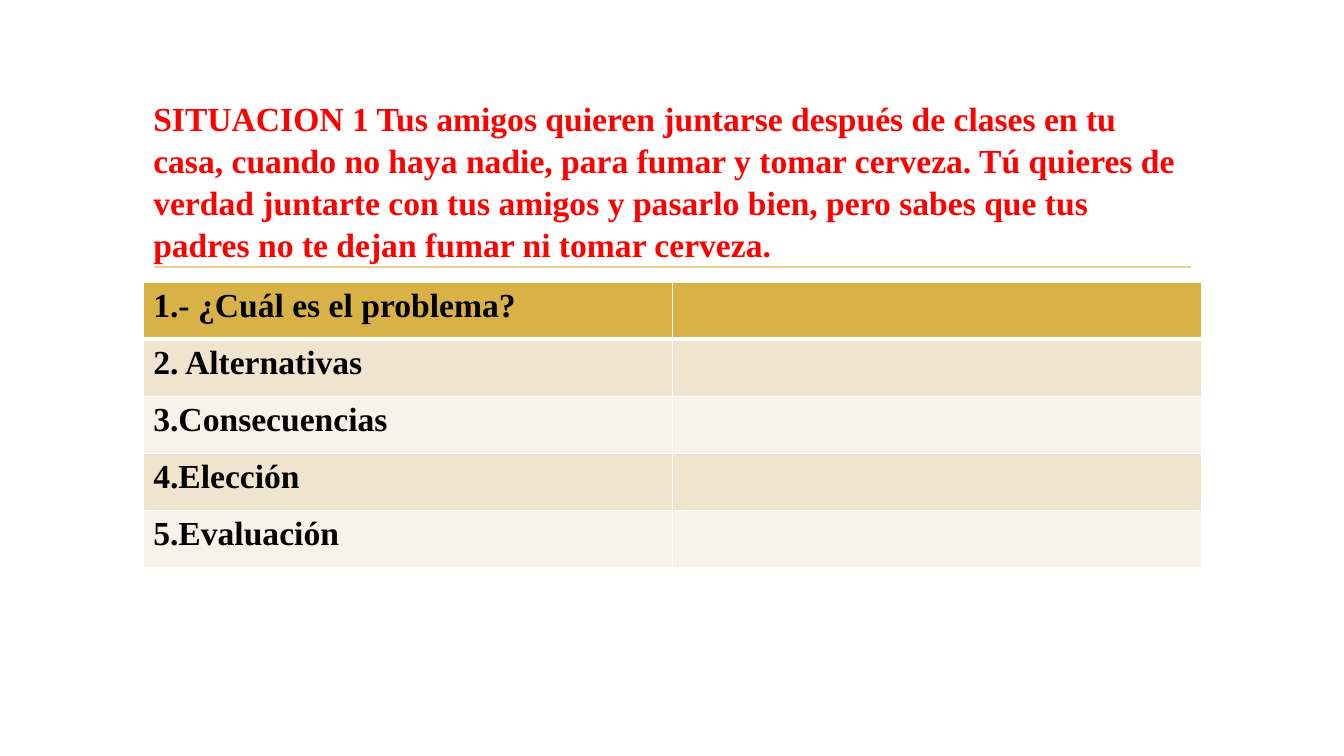
from lxml.etree import SubElement
from pptx import Presentation
from pptx.dml.color import RGBColor
from pptx.enum.shapes import MSO_CONNECTOR
from pptx.enum.text import MSO_ANCHOR, MSO_AUTO_SIZE, PP_ALIGN
from pptx.oxml.ns import qn
from pptx.util import Inches, Pt

LEFT, WIDTH = 1.42, 10.5
TITLE_TOP, TITLE_HEIGHT = 1.07, 1.43
RULE_TOP, RULE_INSET = 2.65, 0.11
TABLE_TOP, TABLE_HEIGHT = 2.8, 2.83
TEXT_FORMAT = {"name": "Times New Roman", "size": Pt(24), "bold": True}
HEADER_FILL = "D9B247"
BAND_FILLS = ["F8F2E9", "F1E4CF"]
TITLE = (
    "SITUACION 1 Tus amigos quieren juntarse después de clases en tu casa, "
    "cuando no haya nadie, para fumar y tomar cerveza. Tú quieres de verdad "
    "juntarte con tus amigos y pasarlo bien, pero sabes que tus padres no te "
    "dejan fumar ni tomar cerveza."
)
STEPS = [
    "1.- ¿Cuál es el problema?",
    "2. Alternativas",
    "3.Consecuencias",
    "4.Elección",
    "5.Evaluación",
]


def set_color(color_format, value):
    color_format.rgb = RGBColor.from_string(value)


def write_text(text_frame, text, color):
    text_frame.text = text
    paragraph = text_frame.paragraphs[0]
    paragraph.alignment = PP_ALIGN.LEFT
    font = paragraph.runs[0].font
    for attribute, value in TEXT_FORMAT.items():
        setattr(font, attribute, value)
    set_color(font.color, color)
    return paragraph


def add_title(slide):
    title = slide.shapes.title
    title.left, title.top = Inches(LEFT), Inches(TITLE_TOP)
    title.width, title.height = Inches(WIDTH), Inches(TITLE_HEIGHT)
    text_frame = title.text_frame
    paragraph = write_text(text_frame, TITLE, "FF0000")
    paragraph.line_spacing = 1.04
    text_frame.word_wrap = True
    text_frame.auto_size = MSO_AUTO_SIZE.NONE
    text_frame.vertical_anchor = MSO_ANCHOR.MIDDLE


def add_rule(slide):
    top = Inches(RULE_TOP)
    rule = slide.shapes.add_connector(
        MSO_CONNECTOR.STRAIGHT,
        Inches(LEFT + RULE_INSET), top,
        Inches(LEFT + WIDTH - RULE_INSET), top,
    )
    rule.line.width = Pt(1.25)
    set_color(rule.line.color, "E8D191")
    SubElement(rule.element.spPr, qn("a:effectLst"))


def set_borders(cell, widths):
    """Draw white cell borders, given widths in points by side tag."""
    properties = cell._tc.get_or_add_tcPr()
    for position, (side, width) in enumerate(widths.items()):
        line = SubElement(properties, qn(f"a:{side}"), w=str(Pt(width)))
        properties.insert(position, line)
        fill = SubElement(line, qn("a:solidFill"))
        SubElement(fill, qn("a:srgbClr"), val="FFFFFF")


def add_steps_table(slide):
    frame = slide.shapes.add_table(
        len(STEPS), 2,
        Inches(LEFT), Inches(TABLE_TOP), Inches(WIDTH), Inches(TABLE_HEIGHT),
    )
    table = frame.table
    for row, step in enumerate(STEPS):
        write_text(table.cell(row, 0).text_frame, step, "000000")
        fill = BAND_FILLS[row % 2] if row else HEADER_FILL
        widths = {
            "lnL": 1,
            "lnR": 1,
            "lnT": 3 if row == 1 else 1,
            "lnB": 3 if row == 0 else 1,
        }
        for cell in table.rows[row].cells:
            cell.fill.solid()
            set_color(cell.fill.fore_color, fill)
            set_borders(cell, widths)


def main():
    presentation = Presentation()
    presentation.slide_width = Inches(13.33)
    presentation.slide_height = Inches(7.5)
    slide = presentation.slides.add_slide(presentation.slide_layouts[5])
    add_rule(slide)
    add_title(slide)
    add_steps_table(slide)
    presentation.save("out.pptx")


if __name__ == "__main__":
    main()
